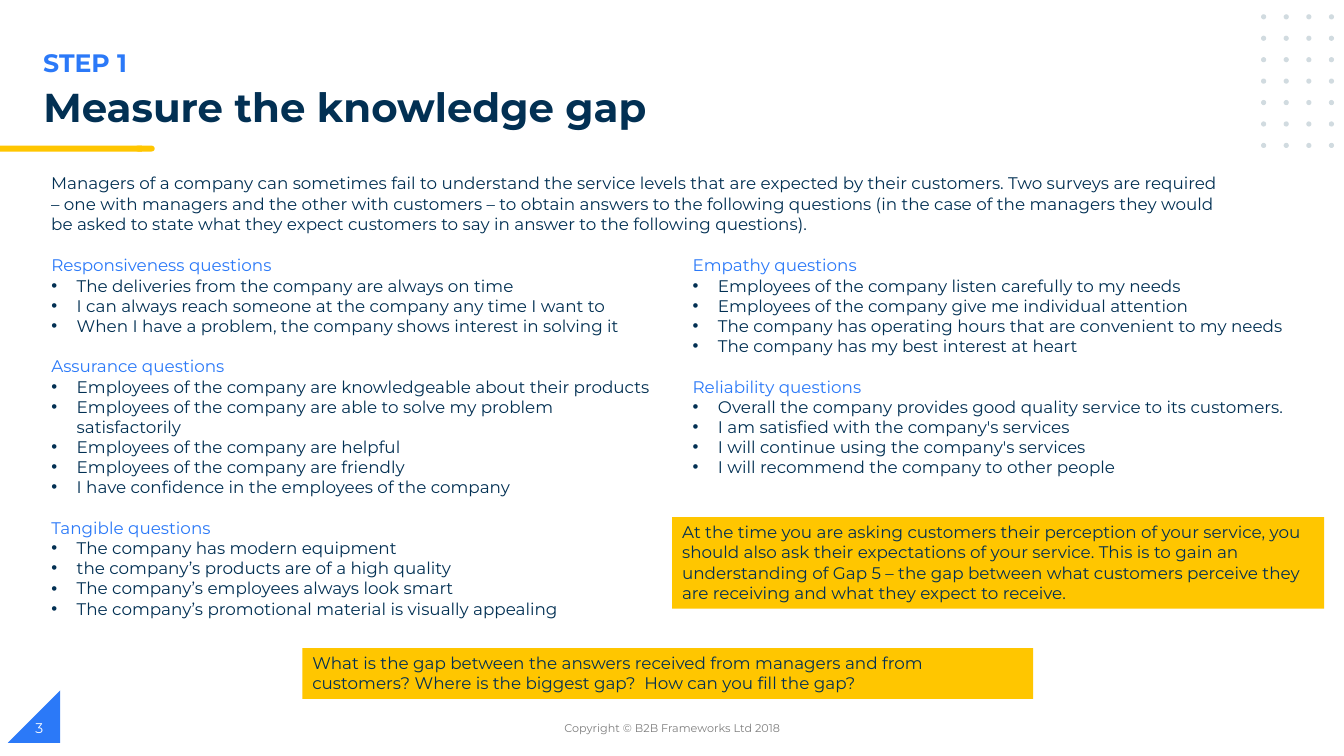
from dataclasses import dataclass

from lxml import etree
from pptx import Presentation
from pptx.dml.color import RGBColor
from pptx.enum import shapes, text
from pptx.oxml import ns
from pptx.util import Cm, Pt

FONT = "Montserrat"
NAVY, BLUE, YELLOW = "023053", "2B79F8", "FFC600"
DOT_GREY, FOOTER_GREY, WHITE = "D1DBE0", "7F7F7F", "FFFFFF"
BODY_SIZE = 12
GROUP_GAP = 14.6


@dataclass
class Area:
    """Left, top, width and height in centimetres."""
    left: float
    top: float
    width: float
    height: float

    def lengths(self) -> tuple:
        return Cm(self.left), Cm(self.top), Cm(self.width), Cm(self.height)


@dataclass
class Label:
    area: Area
    wording: str
    size: float = BODY_SIZE
    color: str = NAVY
    bold: bool = False
    align: text.PP_ALIGN = text.PP_ALIGN.LEFT
    anchor: text.MSO_ANCHOR = text.MSO_ANCHOR.TOP


@dataclass
class QuestionGroup:
    heading: str
    questions: list[str]


def rgb(color: str) -> RGBColor:
    return RGBColor.from_string(color)


def add_span(para, wording: str, size: float, color: str, bold: bool = False) -> None:
    span = para.add_run()
    span.text = wording
    span.font.name = FONT
    span.font.size = Pt(size)
    span.font.bold = bold
    span.font.color.rgb = rgb(color)


def place(shape, area: Area) -> None:
    shape.left, shape.top, shape.width, shape.height = area.lengths()


def write_label(shape, label: Label):
    frame = shape.text_frame
    frame.word_wrap = True
    frame.auto_size = text.MSO_AUTO_SIZE.NONE
    frame.vertical_anchor = label.anchor
    para = frame.paragraphs[0]
    para.alignment = label.align
    add_span(para, label.wording, label.size, label.color, label.bold)
    return para


def add_figure(page, kind, area: Area, color: str):
    figure = page.shapes.add_shape(kind, *area.lengths())
    figure.shadow.inherit = False
    figure.fill.solid()
    figure.fill.fore_color.rgb = rgb(color)
    figure.line.fill.background()
    return figure


def set_bullet(para, shown: bool) -> None:
    props = para._p.get_or_add_pPr()
    indent = Cm(0.64) if shown else 0
    props.set("marL", str(indent))
    props.set("indent", str(-indent))
    if not shown:
        etree.SubElement(props, ns.qn("a:buNone"))
        return
    tint = etree.SubElement(props, ns.qn("a:buClr"))
    etree.SubElement(tint, ns.qn("a:srgbClr"), val=NAVY)
    etree.SubElement(props, ns.qn("a:buFont"), typeface="Arial")
    etree.SubElement(props, ns.qn("a:buChar"), char="•")


def write_questions(box, area: Area, groups: list[QuestionGroup]) -> None:
    place(box, area)
    frame = box.text_frame
    frame.word_wrap = True
    frame.auto_size = text.MSO_AUTO_SIZE.NONE
    for number, group in enumerate(groups):
        for row, wording in enumerate([group.heading, *group.questions]):
            is_heading = row == 0
            is_first = is_heading and number == 0
            para = frame.paragraphs[0] if is_first else frame.add_paragraph()
            para.space_before = Pt(GROUP_GAP if is_heading and not is_first else 0)
            set_bullet(para, not is_heading)
            add_span(para, wording, BODY_SIZE, BLUE if is_heading else NAVY)


TITLE = Label(Area(0.84, 2.08, 26.47, 1.42), "Measure the knowledge gap", 28.8, bold=True)

LEFT_GROUPS = [
    QuestionGroup("Responsiveness questions", [
        "The deliveries from the company are always on time",
        "I can always reach someone at the company any time I want to",
        "When I have a problem, the company shows interest in solving it",
    ]),
    QuestionGroup("Assurance questions", [
        "Employees of the company are knowledgeable about their products",
        "Employees of the company are able to solve my problem satisfactorily",
        "Employees of the company are helpful",
        "Employees of the company are friendly",
        "I have confidence in the employees of the company",
    ]),
    QuestionGroup("Tangible questions", [
        "The company has modern equipment",
        "the company’s products are of a high quality",
        "The company’s employees always look smart",
        "The company’s promotional material is visually appealing",
    ]),
]

RIGHT_GROUPS = [
    QuestionGroup("Empathy questions", [
        "Employees of the company listen carefully to my needs",
        "Employees of the company give me individual attention",
        "The company has operating hours that are convenient to my needs",
        "The company has my best interest at heart",
    ]),
    QuestionGroup("Reliability questions", [
        "Overall the company provides good quality service to its customers.",
        "I am satisfied with the company's services",
        "I will continue using the company's services",
        "I will recommend the company to other people",
    ]),
]

CALLOUTS = [
    Label(Area(7.62, 16.33, 18.42, 1.28),
          "What is the gap between the answers received from managers and from "
          "customers? Where is the biggest gap?  How can you fill the gap?"),
    Label(Area(16.94, 13.03, 16.43, 2.31),
          "At the time you are asking customers their perception of your service, you "
          "should also ask their expectations of your service. This is to gain an "
          "understanding of Gap 5 – the gap between what customers perceive they "
          "are receiving and what they expect to receive."),
]

LABELS = [
    Label(Area(0.84, 1.07, 17, 1.02), "STEP 1", 18, BLUE, bold=True),
    Label(Area(1.04, 4.24, 30.1, 1.8),
          "Managers of a company can sometimes fail to understand the service levels "
          "that are expected by their customers. Two surveys are required – one with "
          "managers and the other with customers – to obtain answers to the following "
          "questions (in the case of the managers they would be asked to state what they "
          "expect customers to say in answer to the following questions)."),
    Label(Area(11.23, 17.83, 11.43, 1.02), "Copyright © B2B Frameworks Ltd 2018", 8,
          FOOTER_GREY, align=text.PP_ALIGN.CENTER, anchor=text.MSO_ANCHOR.MIDDLE),
    Label(Area(0.64, 17.83, 7.62, 1.02), "3", 10, WHITE, anchor=text.MSO_ANCHOR.MIDDLE),
]


def main() -> None:
    deck = Presentation()
    deck.slide_width, deck.slide_height = Cm(33.87), Cm(19.05)
    page = deck.slides.add_slide(deck.slide_layouts.get_by_name("Two Content"))
    title, left_list, right_list = page.placeholders

    # Corner triangle, dot grid and title underline
    kinds = shapes.MSO_SHAPE
    corner = add_figure(page, kinds.RIGHT_TRIANGLE, Area(0.2, 17.4, 1.32, 1.32), BLUE)
    corner._element.spPr.find(ns.qn("a:xfrm")).set("flipH", "1")
    for row in range(7):
        for column in range(4):
            dot = Area(31.78 + 0.57 * column, 0.36 + 0.54 * row, 0.13, 0.13)
            add_figure(page, kinds.OVAL, dot, DOT_GREY)
    add_figure(page, kinds.FLOWCHART_TERMINATOR, Area(3.4, 3.67, 0.5, 0.15), YELLOW)
    add_figure(page, kinds.RECTANGLE, Area(0, 3.67, 3.58, 0.15), YELLOW)

    # Title and question lists
    place(title, TITLE.area)
    write_label(title, TITLE).line_spacing = 0.9
    write_questions(left_list, Area(1.04, 6.3, 15.72, 10), LEFT_GROUPS)
    write_questions(right_list, Area(17.2, 6.3, 15.72, 5.9), RIGHT_GROUPS)

    # Callouts and plain text
    for callout in CALLOUTS:
        write_label(add_figure(page, kinds.RECTANGLE, callout.area, YELLOW), callout)
    for label in LABELS:
        write_label(page.shapes.add_textbox(*label.area.lengths()), label)

    deck.save("out.pptx")


if __name__ == "__main__":
    main()
